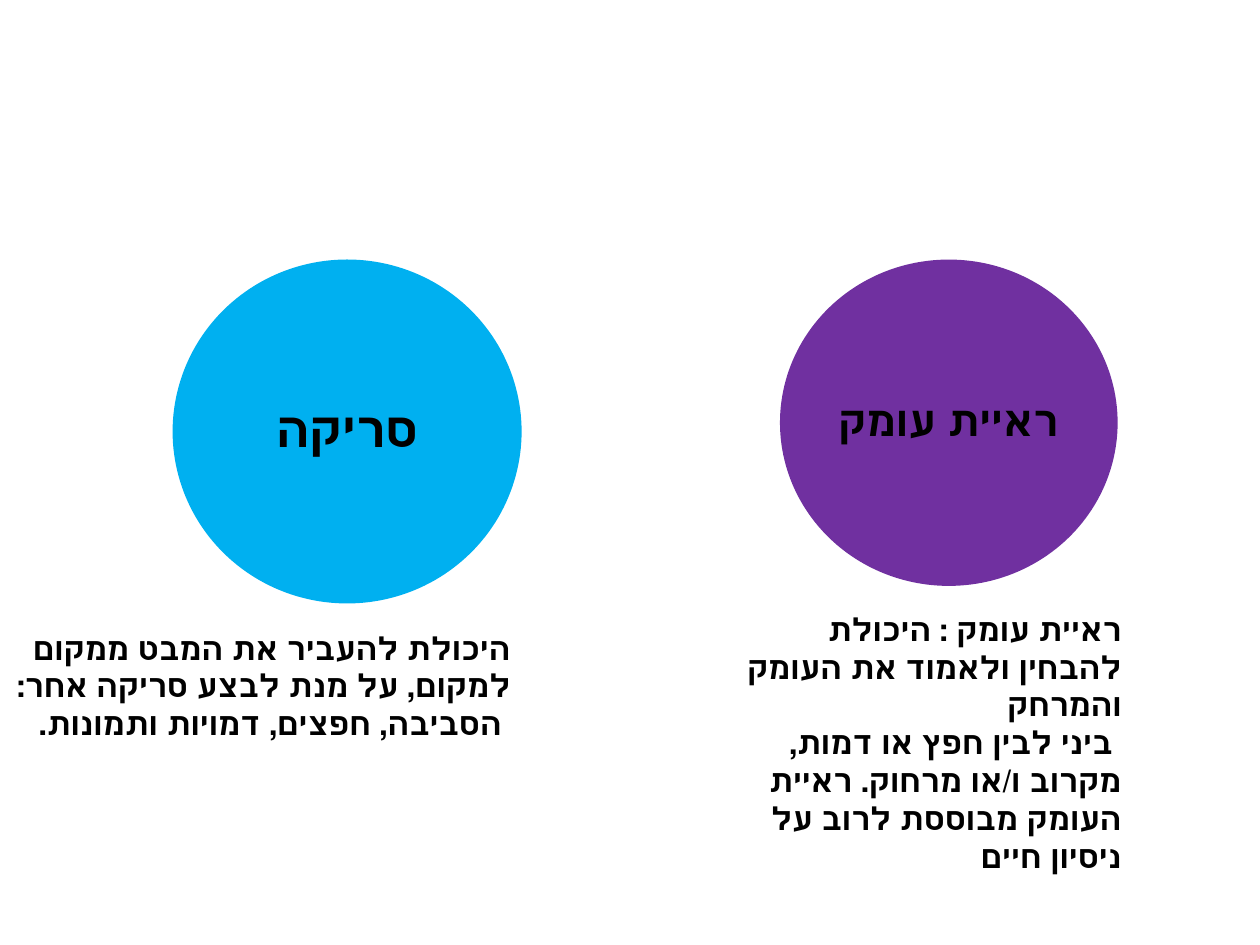
from pptx import Presentation
from pptx.dml.color import RGBColor
from pptx.enum.shapes import MSO_SHAPE
from pptx.enum.text import MSO_ANCHOR, PP_ALIGN
from pptx.util import Inches, Pt

OVAL = MSO_SHAPE.OVAL
MIDDLE = MSO_ANCHOR.MIDDLE
CENTER, RIGHT = PP_ALIGN.CENTER, PP_ALIGN.RIGHT
BODY_FONT, ACCENT_FONT = "Calibri", "Roboto Condensed"


def color(value):
    return RGBColor.from_string(value)


def write_paragraph(paragraph, runs, size, alignment):
    """Fill a right-to-left paragraph with bold black (text, font) runs."""
    paragraph.alignment = alignment
    paragraph._p.get_or_add_pPr().set("rtl", "1")
    for text, font_name in runs:
        run = paragraph.add_run()
        run.text = text
        run.font.name = font_name
        run.font.size = Pt(size)
        run.font.bold = True
        run.font.color.rgb = color("000000")


presentation = Presentation()
presentation.slide_width = Inches(10)
presentation.slide_height = Inches(7.5)
slide = presentation.slides.add_slide(presentation.slide_layouts[6])

# Each topic: circle, its label, and the explanation below
topics = [
    {
        "circle": (6.19, 2.06, 2.68, 2.59), "fill": "7030A0",
        "label": "ראיית עומק", "label_box": (6.58, 2.44, 1.89, 1.83), "label_size": 24,
        "text_box": (5.71, 4.79, 3.29, 1.92),
        "paragraphs": [
            [("ראיית עומק : היכולת להבחין ולאמוד את העומק והמרחק", BODY_FONT)],
            [(" ביני לבין חפץ או דמות, מקרוב ו/או מרחוק. ", BODY_FONT),
             ("ראיית העומק מבוססת לרוב על ניסיון חיים", ACCENT_FONT)],
        ],
    },
    {
        "circle": (1.37, 2.06, 2.77, 2.73), "fill": "00B0F0",
        "label": "סריקה", "label_box": (1.78, 2.46, 1.96, 1.93), "label_size": 28,
        "text_box": (0, 4.94, 4.15, 1.01),
        "paragraphs": [
            [("היכולת להעביר את המבט ממקום למקום, על מנת לבצע סריקה אחר:", BODY_FONT)],
            [(" הסביבה, חפצים, דמויות ותמונות.", BODY_FONT)],
        ],
    },
]

for topic in topics:
    # Circle
    circle = slide.shapes.add_shape(OVAL, *map(Inches, topic["circle"]))
    circle.shadow.inherit = False
    circle.fill.solid()
    circle.fill.fore_color.rgb = color(topic["fill"])
    circle.line.fill.background()

    # Label centred in the circle
    frame = slide.shapes.add_textbox(*map(Inches, topic["label_box"])).text_frame
    frame.word_wrap = True
    frame.vertical_anchor = MIDDLE
    frame.margin_left = frame.margin_right = Inches(0.07)
    frame.margin_top = frame.margin_bottom = Inches(0.02)
    paragraph = frame.paragraphs[0]
    paragraph.line_spacing = 0.9
    write_paragraph(paragraph, [(topic["label"], BODY_FONT)], topic["label_size"], CENTER)

    # Explanation
    frame = slide.shapes.add_textbox(*map(Inches, topic["text_box"])).text_frame
    frame.word_wrap = True
    for index, runs in enumerate(topic["paragraphs"]):
        paragraph = frame.add_paragraph() if index else frame.paragraphs[0]
        write_paragraph(paragraph, runs, 18, RIGHT)

presentation.save("out.pptx")
